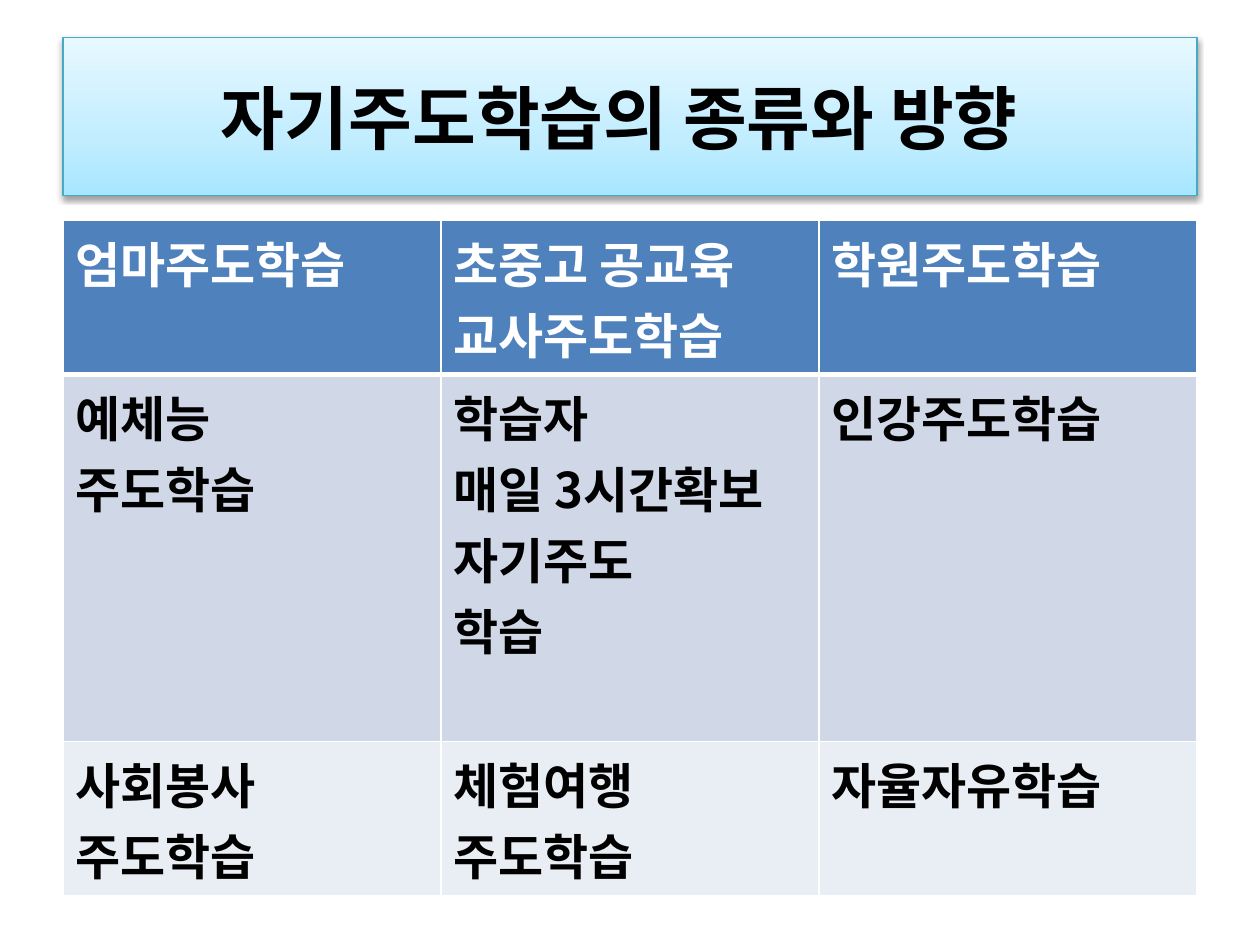
from copy import deepcopy

from lxml import etree
from pptx import Presentation
from pptx.dml.color import RGBColor
from pptx.enum.text import MSO_ANCHOR, MSO_AUTO_SIZE, PP_ALIGN
from pptx.oxml import parse_xml
from pptx.oxml.ns import qn
from pptx.util import Inches, Pt

MIDDLE = MSO_ANCHOR.MIDDLE
CENTER = PP_ALIGN.CENTER
NO_FIT = MSO_AUTO_SIZE.NONE

BLACK = RGBColor(0x00, 0x00, 0x00)
WHITE = RGBColor(0xFF, 0xFF, 0xFF)
BLUE = RGBColor(0x4F, 0x81, 0xBD)
PALE = RGBColor(0xD0, 0xD8, 0xE8)
LIGHT = RGBColor(0xE9, 0xED, 0xF4)
TEAL = RGBColor(0x46, 0xAA, 0xC5)
SKY = [
    (0, RGBColor(0xA7, 0xE6, 0xFF)),
    (0.35, RGBColor(0xC1, 0xED, 0xFF)),
    (1, RGBColor(0xE7, 0xF8, 0xFF)),
]
SPACE = "http://schemas.openxmlformats.org/drawingml/2006/main"

ROWS = [
    (1.22, BLUE, WHITE,
     ["엄마주도학습", "초중고 공교육\n교사주도학습", "학원주도학습"]),
    (2.91, PALE, BLACK,
     ["예체능\n주도학습", "학습자\n매일 3시간확보\n자기주도\n학습", "인강주도학습"]),
    (1.22, LIGHT, BLACK,
     ["사회봉사\n주도학습", "체험여행\n주도학습", "자율자유학습"]),
]


class Deck:
    font = "Noto Sans CJK KR"

    def __init__(self):
        self.file = Presentation()
        self.file.slide_width = Inches(10)
        self.file.slide_height = Inches(7.5)
        self.slide = self.file.slides.add_slide(self.file.slide_layouts[5])

    def text(self, frame, words, size, color, align=None):
        for i, line in enumerate(words.split("\n")):
            para = frame.paragraphs[0] if i == 0 else frame.add_paragraph()
            para.alignment = align
            run = para.add_run()
            run.text = line
            run.font.name = self.font
            run.font.size = Pt(size)
            run.font.bold = True
            run.font.color.rgb = color
            east = etree.SubElement(run.font._element, qn("a:ea"))
            east.set("typeface", self.font)

    def title(self, words, left, top, width, height):
        box = self.slide.shapes.title
        box.left, box.top = Inches(left), Inches(top)
        box.width, box.height = Inches(width), Inches(height)
        self.shade(box)
        box.line.color.rgb = TEAL
        box.line.width = Pt(0.75)
        self.shadow(box)
        frame = box.text_frame
        frame.auto_size = NO_FIT
        frame.word_wrap = True
        frame.vertical_anchor = MIDDLE
        frame.margin_right = Inches(0.27)
        self.text(frame, words, 39.6, BLACK, CENTER)

    def shade(self, box):
        box.fill.gradient()
        box.fill.gradient_angle = 90
        stops = box._element.spPr.find(".//" + qn("a:gsLst"))
        stops.append(deepcopy(stops[0]))
        for stop, (place, color) in zip(box.fill.gradient_stops, SKY):
            stop.position = place
            stop.color.rgb = color

    def shadow(self, box):
        box._element.spPr.append(parse_xml(
            f'<a:effectLst xmlns:a="{SPACE}">'
            f'<a:outerShdw blurRad="{Pt(3.1)}" dist="{Pt(1.6)}" dir="5400000" rotWithShape="0">'
            '<a:srgbClr val="000000"><a:alpha val="38000"/></a:srgbClr>'
            '</a:outerShdw></a:effectLst>'))

    def edge(self, cell, widths):
        props = cell._tc.get_or_add_tcPr()
        for i, (side, width) in enumerate(zip("LRTB", widths)):
            props.insert(i, parse_xml(
                f'<a:ln{side} xmlns:a="{SPACE}" w="{Pt(width)}"><a:solidFill>'
                f'<a:srgbClr val="{WHITE}"/></a:solidFill></a:ln{side}>'))

    def table(self, rows, left, top, width):
        count = len(rows[0][3])
        total = sum(row[0] for row in rows)
        grid = self.slide.shapes.add_table(
            len(rows), count, Inches(left), Inches(top),
            Inches(width), Inches(total)).table
        for r, (height, fill, color, texts) in enumerate(rows):
            grid.rows[r].height = Inches(height)
            for c, words in enumerate(texts):
                cell = grid.cell(r, c)
                cell.fill.solid()
                cell.fill.fore_color.rgb = fill
                self.edge(cell, (1, 1, 3 if r == 1 else 1, 3 if r == 0 else 1))
                self.text(cell.text_frame, words, 28, color)


def main():
    deck = Deck()
    deck.title("자기주도학습의 종류와 방향", 0.5, 0.3, 9, 1.25)
    deck.table(ROWS, 0.5, 1.75, 9)
    deck.file.save("out.pptx")


if __name__ == "__main__":
    main()
